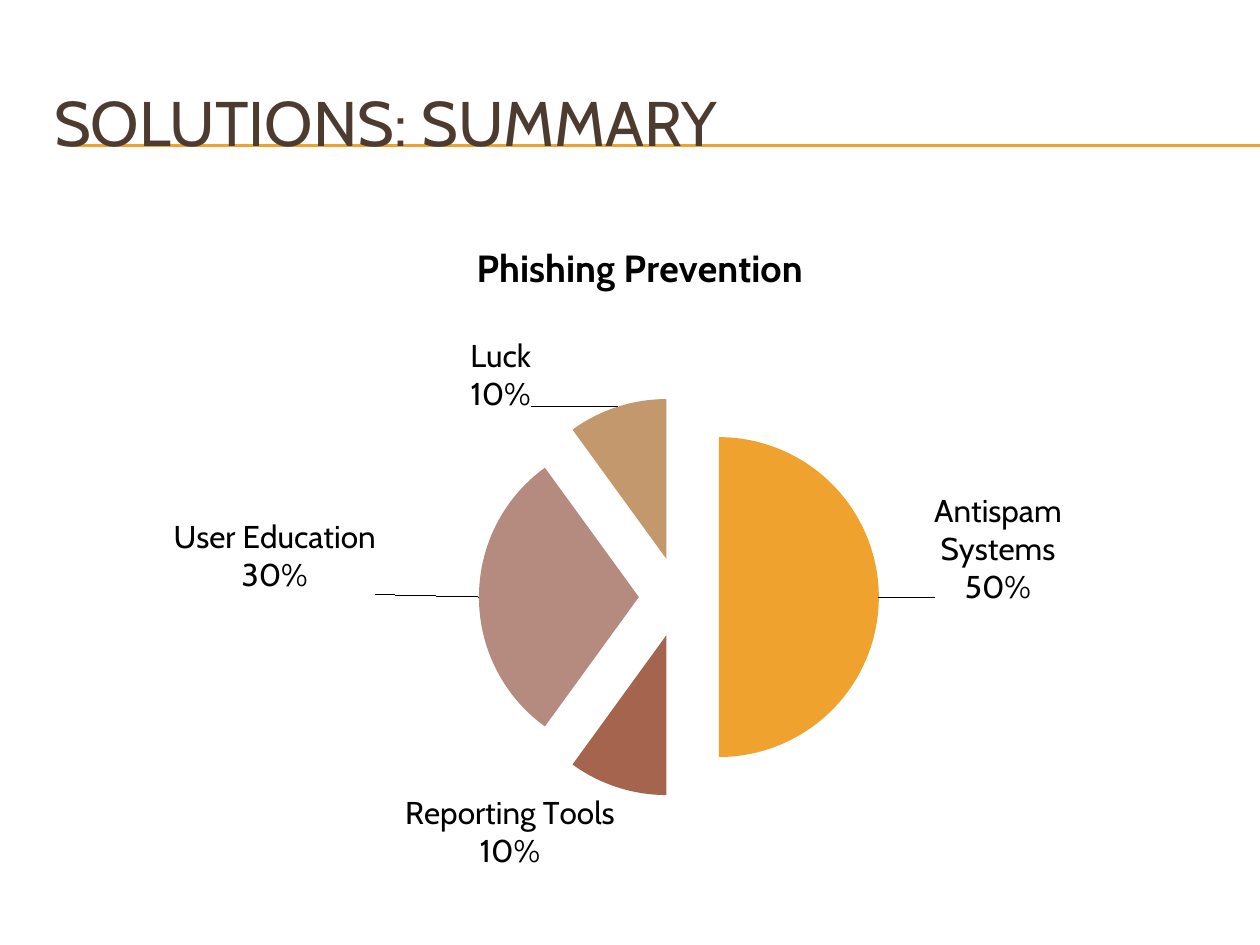
import pptx
import pptx.chart.data
import pptx.dml.color
import pptx.enum.chart
import pptx.enum.shapes
import pptx.enum.text
import pptx.oxml
import pptx.oxml.ns
import pptx.util


def color(hex_code):
    return pptx.dml.color.RGBColor.from_string(hex_code)


def chart_xml(content):
    namespaces = pptx.oxml.ns.nsdecls("c")
    tag, rest = content[1:].split(">", 1)
    return pptx.oxml.parse_xml(f"<{tag} {namespaces}>{rest}")


def manual_layout(**settings):
    rules = "".join(f'<c:{name} val="{value}"/>' for name, value in settings.items())
    return f"<c:layout><c:manualLayout>{rules}</c:manualLayout></c:layout>"


class SlideBuilder:
    FONT = "Cabin"
    TITLE_COLOR = "4E3B30"
    TEXT_COLOR = "000000"
    ACCENT = "F0A22E"

    def __init__(self, presentation):
        self.width = presentation.slide_width
        self.height = presentation.slide_height
        self.slide = presentation.slides.add_slide(presentation.slide_layouts[5])

    def box(self, left, top, width, height):
        return (int(left * self.width), int(top * self.height),
                int(width * self.width), int(height * self.height))

    def style(self, font, size, hex_code, bold=False):
        font.name = self.FONT
        font.size = pptx.util.Pt(size)
        font.bold = bold
        font.color.rgb = color(hex_code)

    def rule(self, left, top):
        x, y, right, _ = self.box(left, top, 1, 0)
        line = self.slide.shapes.add_connector(
            pptx.enum.shapes.MSO_CONNECTOR.STRAIGHT, x, y, right, y)
        line.line.color.rgb = color(self.ACCENT)
        line.line.width = pptx.util.Pt(0.75)
        line._element.spPr.append(pptx.oxml.parse_xml(
            f'<a:effectLst {pptx.oxml.ns.nsdecls("a")}/>'))

    def title(self, text, *shares):
        heading = self.slide.shapes.title
        heading.left, heading.top, heading.width, heading.height = self.box(*shares)
        heading.text_frame.text = text
        heading.text_frame.vertical_anchor = pptx.enum.text.MSO_ANCHOR.MIDDLE
        paragraph = heading.text_frame.paragraphs[0]
        paragraph.alignment = pptx.enum.text.PP_ALIGN.LEFT
        self.style(paragraph.font, 36, self.TITLE_COLOR)
        heading._element.getparent().append(heading._element)

    def pie(self, name, slices, shares, plot_area, explosion):
        data = pptx.chart.data.CategoryChartData(number_format="0")
        data.categories = [category for category, *_ in slices]
        data.add_series(name, [value for _, value, *_ in slices])
        chart = self.slide.shapes.add_chart(
            pptx.enum.chart.XL_CHART_TYPE.PIE, *self.box(*shares), data).chart
        self.style(chart.font, 18, self.TEXT_COLOR)
        chart.has_legend = False
        chart.has_title = True
        chart.chart_title.text_frame.text = name
        self.style(chart.chart_title.text_frame.paragraphs[0].font,
                   21.6, self.TEXT_COLOR, bold=True)

        plot = chart.plots[0]
        plot.vary_by_categories = True
        area = plot._element.getparent()
        for old_layout in area.findall(pptx.oxml.ns.qn("c:layout")):
            area.remove(old_layout)
        left, top, width, height = plot_area
        area.insert(0, chart_xml(manual_layout(
            layoutTarget="inner", xMode="edge", yMode="edge",
            x=left, y=top, w=width, h=height)))

        series = plot.series[0]
        for index, (_, _, fill, _) in enumerate(slices):
            point = series.points[index].format
            point.fill.solid()
            point.fill.fore_color.rgb = color(fill)
            point.line.fill.background()
        series._element.find(pptx.oxml.ns.qn("c:dPt")).addprevious(
            chart_xml(f'<c:explosion val="{explosion}"></c:explosion>'))
        self.pie_labels(series, [offset for *_, offset in slices])

    def pie_labels(self, series, offsets):
        flags = {"showLegendKey": 0, "showVal": 0, "showCatName": 1,
                 "showSerName": 0, "showPercent": 1, "showBubbleSize": 0}
        shown = ('<c:dLblPos val="outEnd"/>'
                 + "".join(f'<c:{name} val="{value}"/>' for name, value in flags.items())
                 + "<c:separator>\n</c:separator>")
        moved = "".join(
            f'<c:dLbl><c:idx val="{index}"/>{manual_layout(x=offset[0], y=offset[1])}'
            f"{shown}</c:dLbl>"
            for index, offset in enumerate(offsets) if offset)
        series._element.find(pptx.oxml.ns.qn("c:cat")).addprevious(chart_xml(
            f'<c:dLbls>{moved}{shown}<c:showLeaderLines val="1"/></c:dLbls>'))


def main():
    presentation = pptx.Presentation()
    presentation.slide_width = pptx.util.Inches(10)
    presentation.slide_height = pptx.util.Inches(7.5)
    summary = SlideBuilder(presentation)
    for rule_top in (1.15, 1.16):
        summary.rule(0.056, rule_top / 7.5)
    margin, span = 0.033, 0.95
    summary.title("SOLUTIONS: SUMMARY", margin, 0.5 / 7.5, span, 0.92 / 7.5)
    prevention = [
        ("Antispam Systems", 50, "F0A22E", (0.04, -0.07)),
        ("Reporting Tools", 10, "A5644E", None),
        ("User Education", 30, "B58B80", (-0.08, -0.06)),
        ("Luck", 10, "C3986D", (-0.07, 0.02)),
    ]
    summary.pie("Phishing Prevention", prevention,
                (margin, 1.7 / 7.5, span, 5.38 / 7.5),
                plot_area=(0.365, 0.27, 0.335, 0.59), explosion=25)
    presentation.save("out.pptx")


if __name__ == "__main__":
    main()
